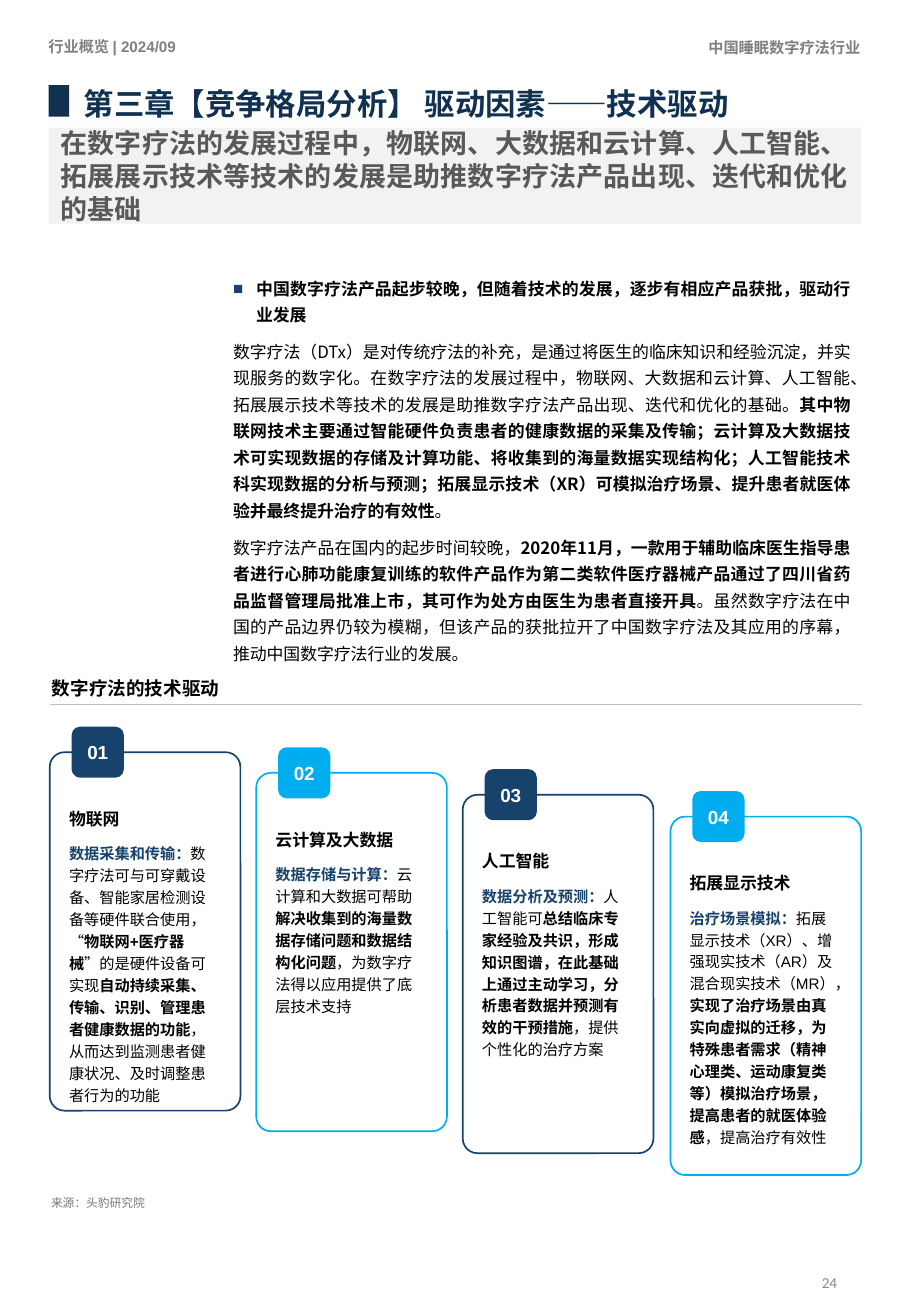
from dataclasses import dataclass
from lxml import etree
from pptx import Presentation
from pptx.dml.color import RGBColor
from pptx.enum.lang import MSO_LANGUAGE_ID
from pptx.enum.shapes import MSO_CONNECTOR, MSO_SHAPE
from pptx.enum.text import MSO_ANCHOR, PP_ALIGN
from pptx.oxml.ns import qn
from pptx.util import Emu, Pt

RECT, ROUND = MSO_SHAPE.RECTANGLE, MSO_SHAPE.ROUNDED_RECTANGLE
STRAIGHT = MSO_CONNECTOR.STRAIGHT
LEFT, CENTER, RIGHT, JUSTIFY = PP_ALIGN.LEFT, PP_ALIGN.CENTER, PP_ALIGN.RIGHT, PP_ALIGN.JUSTIFY
TOP, MIDDLE, BOTTOM = MSO_ANCHOR.TOP, MSO_ANCHOR.MIDDLE, MSO_ANCHOR.BOTTOM
CHINESE = MSO_LANGUAGE_ID.SIMPLIFIED_CHINESE
PX = 9144  # 100 px to the inch


@dataclass(frozen=True)
class Theme:
    sans: str = "Noto Sans CJK SC"
    latin: str = "Arial"
    number: str = "Calibri"
    ink: str = "000000"
    white: str = "FFFFFF"
    title: str = "113150"
    lead: str = "595959"
    band: str = "F2F2F2"
    navy: str = "17426B"
    sky: str = "00ADEF"
    header: str = "808080"
    source: str = "797979"
    page_number: str = "898989"
    rule: str = "BFBFBF"
    title_size: float = 18
    lead_size: float = 16
    badge_size: float = 11.2
    section_size: float = 11
    body_size: float = 10
    small_size: float = 9
    source_size: float = 7
    line_height: float = 1.205


THEME = Theme()

BODY = [
    [("中国数字疗法产品起步较晚，但随着技术的发展，逐步有相应产品获批，驱动行业发展", True)],
    [("数字疗法（DTx）是对传统疗法的补充，是通过将医生的临床知识和经验沉淀，并实现服务的数字化。在数字疗法的发展过程中，物联网、大数据和云计算、人工智能、拓展展示技术等技术的发展是助推数字疗法产品出现、迭代和优化的基础。", False),
     ("其中物联网技术主要通过智能硬件负责患者的健康数据的采集及传输；云计算及大数据技术可实现数据的存储及计算功能、将收集到的海量数据实现结构化；人工智能技术科实现数据的分析与预测；拓展显示技术（XR）可模拟治疗场景、提升患者就医体验并最终提升治疗的有效性", True),
     ("。", False)],
    [("数字疗法产品在国内的起步时间较晚，", False),
     ("2020年11月，一款用于辅助临床医生指导患者进行心肺功能康复训练的软件产品作为第二类软件医疗器械产品通过了四川省药品监督管理局批准上市，其可作为处方由医生为患者直接开具", True),
     ("。虽然数字疗法在中国的产品边界仍较为模糊，但该产品的获批拉开了中国数字疗法及其应用的序幕，推动中国数字疗法行业的发展。", False)],
]

CARDS = [
    ("物联网", "数据采集和传输：", [
        ("数字疗法可与可穿戴设备、智能家居检测设备等硬件联合使用，“", False),
        ("物联网+医疗器械", True), ("”的是硬件设备可实现", False),
        ("自动持续采集、传输、识别、管理患者健康数据的功能", True),
        ("，从而达到监测患者健康状况、及时调整患者行为的功能", False)]),
    ("云计算及大数据", "数据存储与计算：", [
        ("云计算和大数据可帮助", False),
        ("解决收集到的海量数据存储问题和数据结构化问题", True),
        ("，为数字疗法得以应用提供了底层技术支持", False)]),
    ("人工智能", "数据分析及预测：", [
        ("人工智能可", False),
        ("总结临床专家经验及共识，形成知识图谱，在此基础上通过主动学习，分析患者数据并预测有效的干预措施", True),
        ("，提供个性化的治疗方案", False)]),
    ("拓展显示技术", "治疗场景模拟：", [
        ("拓展显示技术（XR）、增强现实技术（AR）及混合现实技术（MR），", False),
        ("实现了治疗场景由真实向虚拟的迁移，为特殊患者需求（精神心理类、运动康复类等）模拟治疗场景，提高患者的就医体验感", True),
        ("，提高治疗有效性", False)]),
]


def px(*lengths):
    return [Emu(length * PX) for length in lengths]


def add_bullet(para, character, color, indent):
    properties = para._p.get_or_add_pPr()
    properties.set("marL", str(indent * PX))
    properties.set("indent", str(-indent * PX))
    bullet_color = etree.SubElement(properties, qn("a:buClr"))
    etree.SubElement(bullet_color, qn("a:srgbClr")).set("val", color)
    etree.SubElement(properties, qn("a:buFont")).set("typeface", THEME.latin)
    etree.SubElement(properties, qn("a:buChar")).set("char", character)


def write_para(para, spans, size, font, align=LEFT, spacing=1.0):
    """Write (text, bold, color) spans into one paragraph."""
    para.alignment = align
    para.line_spacing = Pt(round(size * THEME.line_height * spacing, 1))
    for text, bold, color in spans:
        span = para.add_run()
        span.text = text
        span.font.size, span.font.bold, span.font.name = Pt(size), bold, font
        span.font.color.rgb = RGBColor.from_string(color)
        span.font.language_id = CHINESE
        east_asian = etree.Element(qn("a:ea"))
        east_asian.set("typeface", THEME.sans)
        span.font._element.find(qn("a:latin")).addnext(east_asian)


def set_frame(shape, anchor, left=10, wrap=True):
    frame = shape.text_frame
    frame.word_wrap, frame.vertical_anchor = wrap, anchor
    frame.margin_left, frame.margin_right, frame.margin_top, frame.margin_bottom = px(left, 10, 5, 5)
    return frame


def add_label(page, box, text, size, color, bold=True, font=THEME.sans, align=LEFT,
              anchor=TOP, spacing=1.0, left=10, wrap=True):
    frame = set_frame(page.shapes.add_textbox(*px(*box)), anchor, left, wrap)
    write_para(frame.paragraphs[0], [(text, bold, color)], size, font, align, spacing)


def add_panel(page, kind, box, fill, line=None):
    shape = page.shapes.add_shape(kind, *px(*box))
    shape.shadow.inherit = False
    shape.fill.solid()
    shape.fill.fore_color.rgb = RGBColor.from_string(fill)
    if line:
        shape.line.color.rgb = RGBColor.from_string(line)
        shape.line.width = Pt(1)
    else:
        shape.line.fill.background()
    return shape


def add_margins(page):
    """Running headers, source line and page number."""
    add_label(page, (30, 26, 129, 25), "行业概览 | 2024/09", THEME.small_size, THEME.header,
              font=THEME.latin, wrap=False)
    add_label(page, (508, 27, 210, 25), "中国睡眠数字疗法行业", THEME.small_size, THEME.header, align=RIGHT)
    add_label(page, (42, 979, 355, 22), "来源：头豹研究院", THEME.source_size, THEME.source, bold=False, left=0)
    add_label(page, (530, 1026, 169, 58), "24", THEME.small_size, THEME.page_number, bold=False,
              font=THEME.number, align=RIGHT, anchor=MIDDLE)


def add_heading(page, left, top, width):
    """Chapter title with its marker, and the shaded lead sentence."""
    add_panel(page, RECT, (left, top + 10, 17, 26), THEME.title)
    add_label(page, (left - 10, top, width + 11, 44), "第三章【竞争格局分析】 驱动因素——技术驱动",
              THEME.title_size, THEME.title, anchor=MIDDLE, spacing=1.2, left=39)
    band = add_panel(page, RECT, (left, top + 45, width, 79), THEME.band)
    lead = "在数字疗法的发展过程中，物联网、大数据和云计算、人工智能、拓展展示技术等技术的发展是助推数字疗法产品出现、迭代和优化的基础"
    write_para(set_frame(band, MIDDLE).paragraphs[0], [(lead, True, THEME.lead)],
               THEME.lead_size, THEME.sans, JUSTIFY)


def add_body(page, box):
    """Bulleted key point followed by the running text."""
    frame = set_frame(page.shapes.add_textbox(*px(*box)), TOP)
    for index, spans in enumerate(BODY):
        para = frame.add_paragraph() if index else frame.paragraphs[0]
        if index:
            para.space_before = Pt(6)
        else:
            add_bullet(para, "■", THEME.navy, 19)
        write_para(para, [(text, bold, THEME.ink) for text, bold in spans],
                   THEME.body_size, THEME.sans, JUSTIFY, 1.3)


def add_section_title(page, left, top, width):
    add_label(page, (left - 8, top, 496, 28), "数字疗法的技术驱动", THEME.section_size, THEME.ink, align=JUSTIFY)
    rule = page.shapes.add_connector(STRAIGHT, *px(left, top + 28, left + width, top + 28))
    rule.line.color.rgb = RGBColor.from_string(THEME.rule)
    rule.line.width = Pt(0.5)
    etree.SubElement(rule._element.spPr, qn("a:effectLst"))


def add_card(page, left, top, number, color, title, topic, spans):
    """Outlined card with a number badge on its top edge."""
    panel = add_panel(page, ROUND, (left, top, 157, 295), THEME.white, color)
    panel.adjustments[0] = 0.077
    add_label(page, (left + 6, top + 41, 143, 27), title, THEME.body_size, THEME.ink,
              font=THEME.latin, anchor=BOTTOM)
    text = set_frame(page.shapes.add_textbox(*px(left + 6, top + 68, 143, 227)), TOP)
    colored = [(topic, True, THEME.navy)] + [(words, bold, THEME.ink) for words, bold in spans]
    write_para(text.paragraphs[0], colored, THEME.small_size, THEME.latin, LEFT, 1.2)
    badge = add_panel(page, ROUND, (left + 18, top - 21, 43, 42), color)
    write_para(set_frame(badge, MIDDLE, wrap=False).paragraphs[0], [(f"{number:02d}", True, THEME.white)],
               THEME.badge_size, THEME.latin, CENTER)


def main():
    deck = Presentation()
    deck.slide_width, deck.slide_height = px(750, 1083)
    page = deck.slides.add_slide(deck.slide_layouts[6])
    add_margins(page)
    add_heading(page, 40, 60, 669)
    add_body(page, (182, 219, 528, 331))
    add_section_title(page, 41, 552, 669)
    # Cards step down from left to right in alternating colours
    for index, card in enumerate(CARDS):
        color = (THEME.navy, THEME.sky)[index % 2]
        add_card(page, 41 + index * 511 // 3, 619 + index * 53 // 3, index + 1, color, *card)
    deck.save("out.pptx")


if __name__ == "__main__":
    main()
